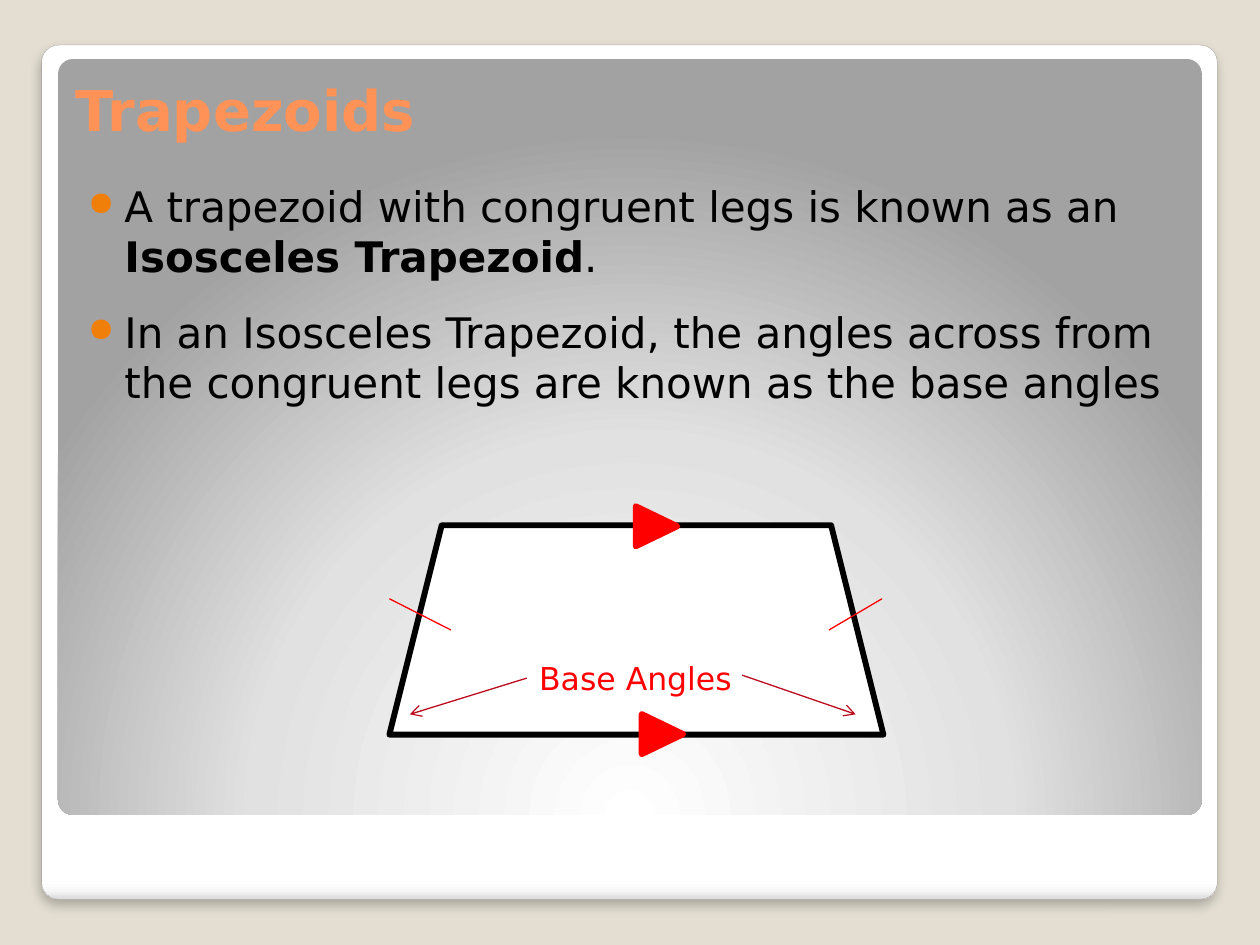
"""Build the slide on isosceles trapezoids and their base angles."""
from lxml.etree import SubElement
from pptx import Presentation
from pptx.dml.color import RGBColor
from pptx.enum.shapes import MSO_CONNECTOR, MSO_SHAPE
from pptx.enum.text import MSO_ANCHOR
from pptx.oxml import parse_xml
from pptx.oxml.ns import nsdecls, qn
from pptx.util import Cm, Pt

FONT = "DejaVu Sans"
BEIGE = RGBColor(0xE3, 0xDE, 0xD1)
GRAY = RGBColor(0xA4, 0xA4, 0xA4)
WHITE = RGBColor(0xFF, 0xFF, 0xFF)
BLACK = RGBColor(0, 0, 0)
ORANGE = RGBColor(0xFF, 0x92, 0x57)
BULLET_ORANGE = RGBColor(0xF0, 0x7F, 0x09)
RED = RGBColor(0xFF, 0, 0)
DARK_RED = RGBColor(0xBC, 0x0B, 0x1F)

TITLE = "Trapezoids"
BULLETS = [
    [("A trapezoid with congruent legs is known as an ", False),
     ("Isosceles Trapezoid", True), (".", False)],
    [("In an Isosceles Trapezoid, the angles across from the congruent legs "
      "are known as the base angles", False)],
]
LABEL = "Base Angles"

CARD = (0.84, 0.91, 23.7, 17.22)
PANEL = (1.17, 1.19, 23.06, 15.24)
CARD_STOPS = [(0, "FFFFFF"), (98, "FFFFFF"), (99, "F7F7F7"), (100, "DADADA")]
PANEL_STOPS = [(0, "FFFFFF"), (55, "E1E1E1"), (100, "A2A2A2")]
CARD_SHADE = '<a:lin ang="5400000" scaled="0"/>'
PANEL_SHADE = ('<a:path path="circle"><a:fillToRect l="50000" t="175000" '
               'r="50000" b="-75000"/></a:path>')
CARD_SHADOW = ('<a:outerShdw {} blurRad="76200" dist="50800" dir="5400000">'
               '<a:srgbClr val="000000"><a:alpha val="25000"/></a:srgbClr>'
               '</a:outerShdw>')

TRAPEZOID = (7.85, 10.59, 9.96, 4.22)
PARALLEL_MARKS = [(12.83, 10.19), (12.95, 14.38)]
MARK_SIZE = (0.81, 0.84)
LEG_TICKS = [(7.85, 12.07, 9.09, 12.7), (17.78, 12.07, 16.71, 12.7)]
ANGLE_ARROWS = [(10.62, 13.67, 8.26, 14.4), (14.96, 13.61, 17.25, 14.4)]


def lengths(values):
    return [Cm(value) for value in values]


def add_shape(shapes, kind, box, fill=None, line=None, width=3.35):
    shape = shapes.add_shape(kind, *lengths(box))
    shape.shadow.inherit = False
    if fill is not None:
        shape.fill.solid()
        shape.fill.fore_color.rgb = fill
    if line is None:
        shape.line.fill.background()
    else:
        shape.line.color.rgb = line
        shape.line.width = Pt(width)
    return shape


def add_rounded(shapes, box, stops, shade, line=None):
    shape = add_shape(shapes, MSO_SHAPE.ROUNDED_RECTANGLE, box, None, line, 0.16)
    shape.adjustments[0] = 0.02
    stop_list = "".join(
        f'<a:gs pos="{position * 1000}"><a:srgbClr val="{color}"/></a:gs>'
        for position, color in stops)
    shape.element.spPr.insert(2, parse_xml(
        f'<a:gradFill {nsdecls("a")} rotWithShape="1">'
        f'<a:gsLst>{stop_list}</a:gsLst>{shade}</a:gradFill>'))
    return shape


def add_line(shapes, ends, color, arrow=False):
    line = shapes.add_connector(MSO_CONNECTOR.STRAIGHT, *lengths(ends))
    line.line.color.rgb = color
    line.line.width = Pt(0.75)
    if arrow:
        SubElement(line.line._get_or_add_ln(), qn("a:tailEnd"), type="arrow")
    SubElement(line.element.spPr, qn("a:effectLst"))


def style(font, size, color, bold=None):
    font.name, font.size, font.bold = FONT, Pt(size), bold
    font.color.rgb = color


def add_bullet(paragraph, runs):
    style(paragraph.font, 24, BLACK)
    paragraph.space_before, paragraph.space_after = Pt(2.5), Pt(12)
    properties = paragraph._p.get_or_add_pPr()
    properties.set("marL", str(Cm(0.74)))
    properties.set("indent", str(-Cm(0.74)))
    bullet = [f'<a:buClr {nsdecls("a")}><a:srgbClr val="{BULLET_ORANGE}"/></a:buClr>',
              f'<a:buSzPct {nsdecls("a")} val="80000"/>',
              f'<a:buChar {nsdecls("a")} char="●"/>']
    for part in bullet:
        properties.find(qn("a:defRPr")).addprevious(parse_xml(part))
    for text, bold in runs:
        run = paragraph.add_run()
        run.text = text
        style(run.font, 24, BLACK, bold)


def add_title(slide):
    title = slide.shapes.title
    title.left, title.top, title.width, title.height = lengths((1.27, 1.3, 22.7, 1.8))
    title.text_frame.text = TITLE
    title.text_frame.vertical_anchor = MSO_ANCHOR.MIDDLE
    paragraph = title.text_frame.paragraphs[0]
    paragraph.alignment = 1
    style(paragraph.font, 32, ORANGE, True)
    style(paragraph.runs[0].font, 32, ORANGE, True)
    slide.shapes._spTree.append(title.element)


def add_body(shapes):
    frame = shapes.add_textbox(*lengths((1.27, 3.38, 22.73, 13.11))).text_frame
    frame.word_wrap = True
    frame.margin_left, frame.margin_top = Cm(0.5), Cm(0.25)
    for index, runs in enumerate(BULLETS):
        add_bullet(frame.add_paragraph() if index else frame.paragraphs[0], runs)


def add_figure(shapes):
    figure = shapes.add_group_shape().shapes
    add_shape(figure, MSO_SHAPE.TRAPEZOID, TRAPEZOID, WHITE, BLACK)
    for corner in PARALLEL_MARKS:
        mark = add_shape(figure, MSO_SHAPE.ISOSCELES_TRIANGLE,
                         corner + MARK_SIZE, RED, RED)
        mark.rotation = 90
    for ends in LEG_TICKS:
        add_line(figure, ends, RED)
    label = shapes.add_textbox(*lengths((10.62, 13.16, 4.65, 1.02))).text_frame
    label.word_wrap = True
    label.text = LABEL
    style(label.paragraphs[0].runs[0].font, 18, RED)
    for ends in ANGLE_ARROWS:
        add_line(shapes, ends, DARK_RED, arrow=True)


def main():
    presentation = Presentation()
    presentation.slide_width, presentation.slide_height = Cm(25.4), Cm(19.05)
    slide = presentation.slides.add_slide(presentation.slide_layouts[5])
    slide.background.fill.solid()
    slide.background.fill.fore_color.rgb = BEIGE
    card = add_rounded(slide.shapes, CARD, CARD_STOPS, CARD_SHADE, GRAY)
    card.element.spPr.find(qn("a:effectLst")).append(
        parse_xml(CARD_SHADOW.format(nsdecls("a"))))
    add_rounded(slide.shapes, PANEL, PANEL_STOPS, PANEL_SHADE)
    add_title(slide)
    add_body(slide.shapes)
    add_figure(slide.shapes)
    presentation.save("out.pptx")


if __name__ == "__main__":
    main()
